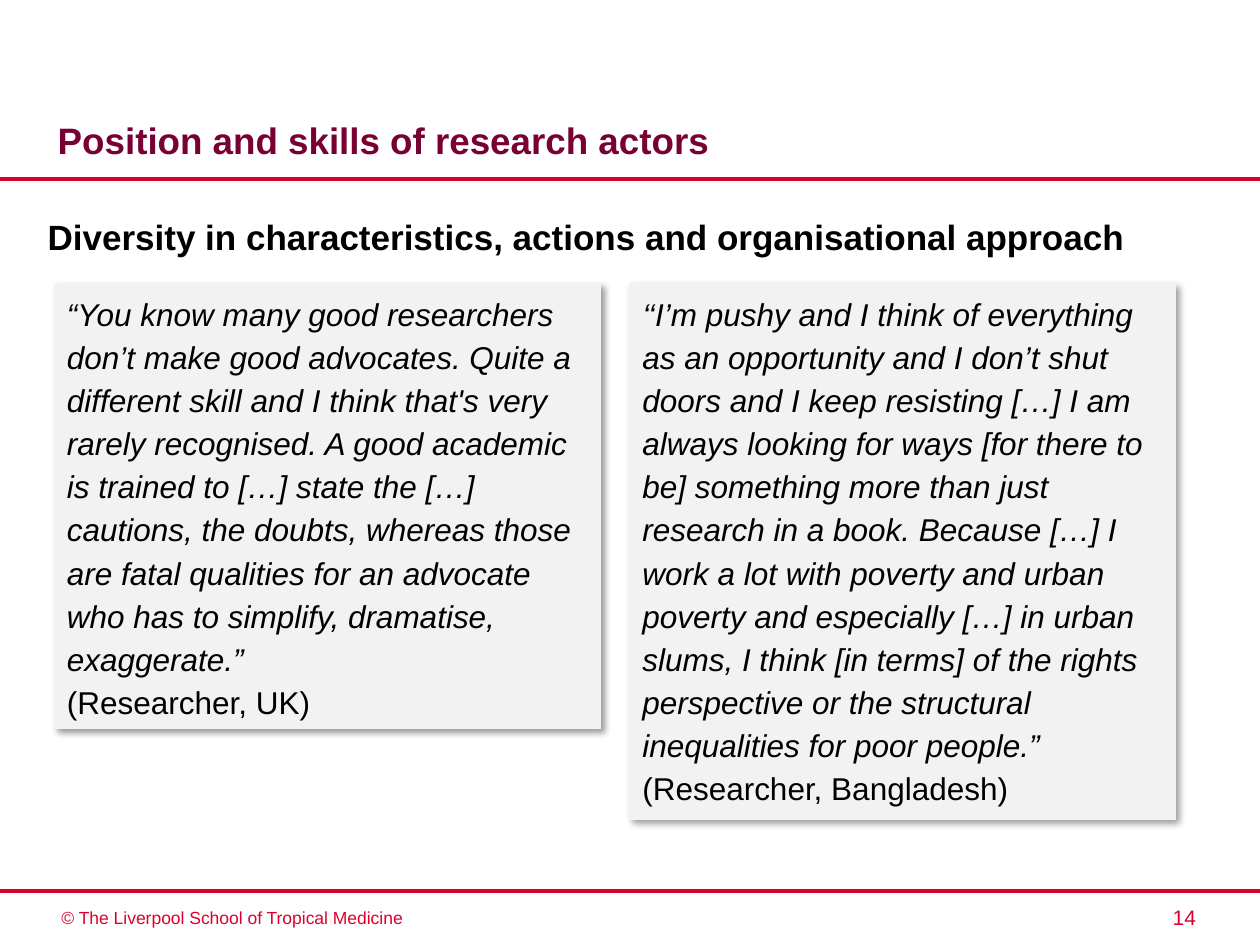
from lxml import etree
from pptx import Presentation
from pptx.dml.color import RGBColor
from pptx.enum.shapes import MSO_CONNECTOR, MSO_SHAPE
from pptx.enum.text import MSO_ANCHOR, PP_ALIGN
from pptx.oxml import parse_xml
from pptx.oxml.ns import nsdecls, qn
from pptx.util import Cm, Pt

STRAIGHT = MSO_CONNECTOR.STRAIGHT
RECT = MSO_SHAPE.RECTANGLE
TOP, BOTTOM = MSO_ANCHOR.TOP, MSO_ANCHOR.BOTTOM
LEFT, RIGHT = PP_ALIGN.LEFT, PP_ALIGN.RIGHT

FONT = "Arial"
RED, PLUM, BLACK, GREY = "DC002E", "790033", "000000", "F2F2F2"
SLIDE_W, SLIDE_H = 25.4, 19.05
LINE_SPACING = 1.14

# Quote cards: left, height, quotation, speaker
QUOTES = [
    (12.7, 10.8,
     "‘‘I’m pushy and I think of everything as an opportunity and I don’t shut "
     "doors and I keep resisting […] I am always looking for ways [for there to "
     "be] something more than just research in a book. Because […] I work a lot "
     "with poverty and urban poverty and especially […] in urban slums, I think "
     "[in terms] of the rights perspective or the structural inequalities for "
     "poor people.”",
     "(Researcher, Bangladesh)"),
    (1.1, 8.97,
     "“You know many good researchers don’t make good advocates. Quite a "
     "different skill and I think that's very rarely recognised. A good academic "
     "is trained to […] state the […] cautions, the doubts, whereas those are "
     "fatal qualities for an advocate who has to simplify, dramatise, "
     "exaggerate.”",
     "(Researcher, UK)"),
]


def rgb(value):
    return RGBColor.from_string(value)


def style(p, size, color, bold=False, italic=False, align=LEFT):
    p.alignment = align
    for r in p.runs:
        f = r.font
        f.name, f.size, f.bold, f.italic = FONT, Pt(size), bold, italic
        f.color.rgb = rgb(color)


def add_title(s, text):
    title = s.shapes.title
    title.left, title.top = Cm(0.91), Cm(1.7)
    title.width, title.height = Cm(17.98), Cm(1.7)
    tf = title.text_frame
    tf.text = text
    tf.vertical_anchor = BOTTOM
    style(tf.paragraphs[0], 21, PLUM, bold=True)


def add_text(s, box, text, size, color, bold=False, align=LEFT, spacing=1.0):
    tf = s.shapes.add_textbox(*map(Cm, box)).text_frame
    tf.word_wrap = True
    tf.text = text
    p = tf.paragraphs[0]
    p.line_spacing = spacing
    style(p, size, color, bold, align=align)


def add_rule(s, y):
    line = s.shapes.add_connector(STRAIGHT, Cm(0), Cm(y), Cm(SLIDE_W), Cm(y))
    line.line.color.rgb = rgb(RED)
    line.line.width = Pt(2.25)
    etree.SubElement(line._element.spPr, qn("a:effectLst"))


def add_shadow(shape):
    shape._element.spPr.append(parse_xml(
        f'<a:effectLst {nsdecls("a")}>'
        f'<a:outerShdw blurRad="{Pt(4)}" dist="{Pt(3)}" dir="2700000" '
        'algn="tl" rotWithShape="0">'
        f'<a:srgbClr val="{BLACK}"><a:alpha val="40000"/></a:srgbClr>'
        '</a:outerShdw></a:effectLst>'))


def add_quote(s, left, height, quote, speaker):
    card = s.shapes.add_shape(RECT, Cm(left), Cm(5.72), Cm(11), Cm(height))
    card.fill.solid()
    card.fill.fore_color.rgb = rgb(GREY)
    card.line.color.rgb = rgb(GREY)
    card.line.width = Pt(0.75)
    add_shadow(card)
    tf = card.text_frame
    tf.word_wrap = True
    tf.vertical_anchor = TOP
    tf.text = f"{quote}\n{speaker}"
    for p, italic in zip(tf.paragraphs, (True, False)):
        p.line_spacing = LINE_SPACING
        style(p, 18, BLACK, italic=italic)


def main():
    prs = Presentation()
    prs.slide_width, prs.slide_height = Cm(SLIDE_W), Cm(SLIDE_H)
    s = prs.slides.add_slide(prs.slide_layouts[5])

    # Footer and rules
    add_text(s, (19.71, 18.11, 4.65, 0.77), "14", 12, RED, align=RIGHT)
    add_text(s, (0.99, 18.16, 10.03, 0.68),
             "© The Liverpool School of Tropical Medicine", 10, RED)
    for y in (3.6, 17.96):
        add_rule(s, y)

    # Title and heading
    add_title(s, "Position and skills of research actors")
    add_text(s, (0.71, 4.11, 24, 13.59),
             "Diversity in characteristics, actions and organisational approach",
             20, BLACK, bold=True, spacing=LINE_SPACING)

    # Quotes
    for quote in QUOTES:
        add_quote(s, *quote)

    prs.save("out.pptx")


if __name__ == "__main__":
    main()
